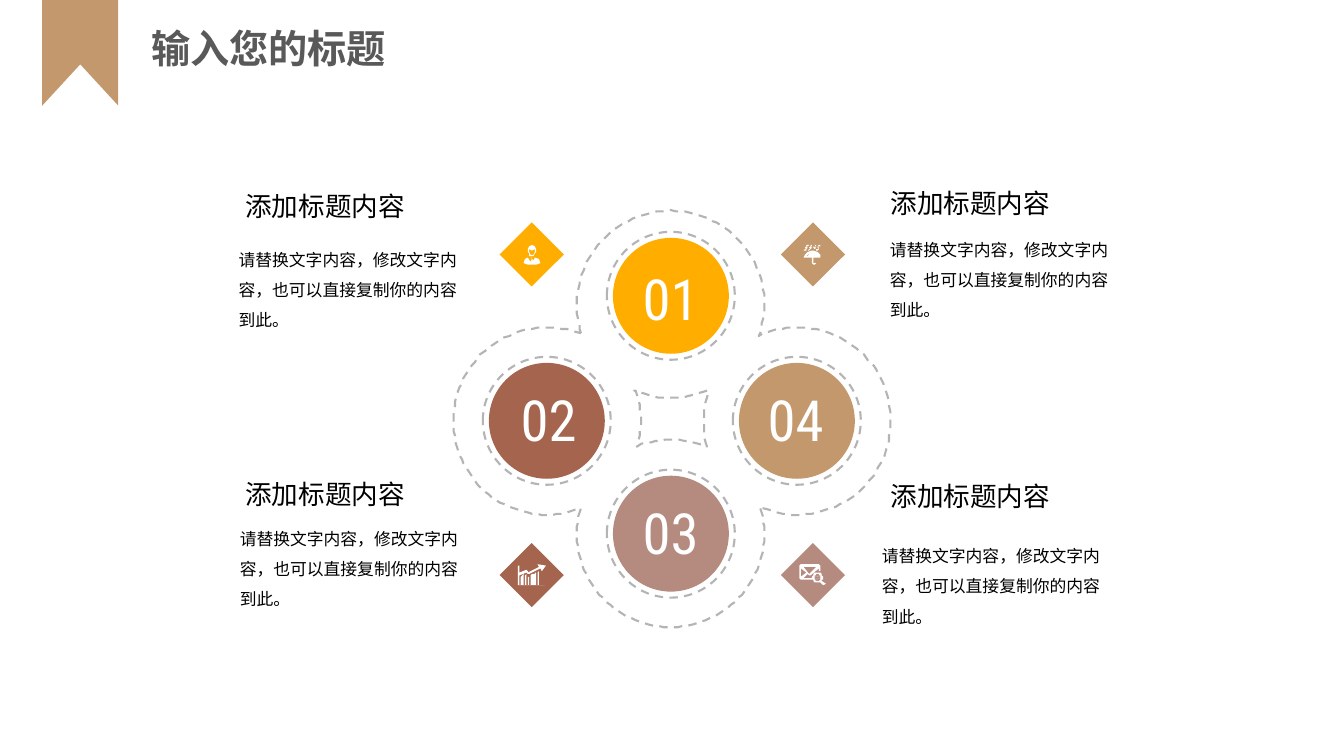
"""Build a slide with four numbered circles, four icon diamonds and their captions."""
from dataclasses import dataclass
from math import cos, radians, sin

from lxml.etree import SubElement
from pptx import Presentation
from pptx.dml.color import RGBColor as RGB
from pptx.enum.dml import MSO_LINE
from pptx.enum.shapes import MSO_SHAPE as Preset
from pptx.enum.text import MSO_ANCHOR as Anchor, MSO_AUTO_SIZE as AutoSize, PP_ALIGN as Align
from pptx.oxml.ns import qn
from pptx.util import Pt


@dataclass(frozen=True)
class Theme:
    tan: RGB = RGB(0xC3, 0x98, 0x6D)
    rust: RGB = RGB(0xA5, 0x64, 0x4E)
    amber: RGB = RGB(0xFF, 0xAE, 0x00)
    rose: RGB = RGB(0xB5, 0x8B, 0x80)
    dash: RGB = RGB(0xB4, 0xB4, 0xB4)
    grey: RGB = RGB(0x59, 0x59, 0x59)
    white: RGB = RGB(0xFF, 0xFF, 0xFF)
    black: RGB = RGB(0, 0, 0)
    title: float = 28
    number: float = 40.5
    heading: float = 19
    body: float = 12
    latin: str = "Roboto Condensed"
    chinese: str = "Noto Sans CJK SC"


theme = Theme()
prs = Presentation()
prs.slide_width, prs.slide_height = Pt(960), Pt(540)
slide = prs.slides.add_slide(prs.slide_layouts[5])
shapes = slide.shapes


def arc(x, y, radius, start, end, step=3):
    """Return points along a circle between two angles in degrees."""
    count = max(1, round(abs(end - start) / step))
    angles = [radians(start + (end - start) * i / count) for i in range(count + 1)]
    return [(x + radius * cos(a), y + radius * sin(a)) for a in angles]


def trace(contours, x=0, y=0):
    """Draw closed contours, given in points around (x, y), as one shape."""
    builder = None
    for contour in contours:
        (first_x, first_y), *rest = [(x + dx, y + dy) for dx, dy in contour]
        if builder is None:
            builder = shapes.build_freeform(first_x, first_y, scale=Pt(1))
        else:
            builder.move_to(first_x, first_y)
        builder.add_line_segments(rest, close=True)
    drawn = builder.convert_to_shape()
    drawn.shadow.inherit = False
    return drawn


for preset, top, height, color in [(Preset.RECTANGLE, -0.7, 76.3, theme.tan),
                                   (Preset.ISOSCELES_TRIANGLE, 46.1, 29.5, theme.white)]:
    ribbon = shapes.add_shape(preset, Pt(30.2), Pt(top), Pt(54.3), Pt(height))
    ribbon.shadow.inherit = False
    ribbon.fill.solid()
    ribbon.fill.fore_color.rgb = color
    ribbon.line.fill.background()

# Angles run clockwise from the right: outer sweep first, then inner sweep.
lobes = [(479, 217.4, (162, 378), (67, 113)), (569.4, 300.8, (246, 474), (164, 198)),
         (479, 381, (-16, 196), (249, 293)), (390.8, 300.8, (69, 291), (-19, 15))]
outer = [point for x, y, sweep, _ in lobes for point in arc(x, y, 66.9, *sweep)]
top_lobe, *others = lobes
inner = [point for x, y, _, sweep in [top_lobe, *reversed(others)]
         for point in arc(x, y, 66.9, *sweep)]
clover = trace([outer, inner])
clover.fill.background()

dashed = [clover]
for x, y, color in [(479.2, 211.3, theme.amber), (569.2, 300.6, theme.tan),
                    (390.6, 300.6, theme.rust), (479.2, 381.2, theme.rose)]:
    ring, disc = [shapes.add_shape(Preset.OVAL, Pt(x - r), Pt(y - r), Pt(2 * r), Pt(2 * r))
                  for r in (45.7, 41.4)]
    ring.shadow.inherit = disc.shadow.inherit = False
    ring.fill.background()
    disc.fill.solid()
    disc.fill.fore_color.rgb = color
    disc.line.fill.background()
    dashed.append(ring)

for outline in dashed:
    outline.line.color.rgb = theme.dash
    outline.line.width = Pt(1.5)
    outline.line.dash_style = MSO_LINE.DASH

person = [
    [(-3.2, -4), (-2.2, -6), (0, -6.8), (2.2, -6), (3.2, -4), (3.2, -1.4), (2.2, -0.6),
     (1.3, 0.8), (0, 1.2), (-1.3, 0.8), (-2.2, -0.6), (-3.2, -1.4)],
    [(-1.8, -3.8), (-1.8, -1.6), (-1, 0), (0, 0.4), (1, 0), (1.8, -1.6), (1.8, -3.4), (0, -3.2)],
    [(-2.5, 1.8), (-5.2, 3), (-6.1, 6.5), (-3, 7.3), (3, 7.3), (6.1, 6.5), (5.2, 3), (2, 1.8),
     (1, 4.7), (0.4, 3.2), (0.5, 2.4), (-0.5, 2.4), (-0.2, 3.2), (-1, 5.2)]]

drops = [[(x, y), (x + 1.2, y + 0.4), (x + 0.7, y + 1.3), (x - 0.5, y + 0.9)]
         for row, (left, y) in enumerate([(-4.3, -7.2), (-4.9, -5.4), (-5.7, -3.7)])
         for x in [left + 2.8 * i for i in range(4)] if row < 2 or abs(x) > 1]
umbrella = [
    [(-0.7, -3.2), (0, -3.2), (0, -2.5), (3, -1.6), (5, 0.2), (5.8, 2.7), (3.5, 2.2), (1.5, 2.7),
     (0, 2.2), (0, 6), (0.8, 6.7), (1.5, 6), (2.3, 6.2), (1.6, 7.4), (0.2, 7.5), (-0.8, 6.6),
     (-0.8, 2.2), (-2.4, 2.7), (-4.4, 2.2), (-6.7, 2.7), (-5.6, -0.2), (-3.4, -1.8), (-0.7, -2.5)],
    [(-5.2, 1.1), (-4, 1.6), (-1.8, -1.6)], *drops]

bars = [[(x, 6.8), (x, top), (x + 1.1, top - 0.3), (x + 1.1, 6.8)]
        for x, top in [(-8.3 + 1.8 * i, top) for i, top in
                       enumerate([0.7, 0, 0, 1.1, 0, -0.7, -1.8, -2.2])]]
growth = [
    [(-9.7, -6.8), (-9, -6.8), (-9, 6.8), (9, 6.8), (9, 7.6), (-9.7, 7.6)],
    [(-9, -1.8), (-4, -4), (-3.2, -3.2), (-2.5, -1.8), (5.4, -5.4), (4.7, -7.4), (9.7, -6.8),
     (6.8, -2.5), (6.1, -4.5), (-1.8, -0.4), (-3.2, -1.1), (-4, -1.8), (-9, 0.4)], *bars]

lines = [[(x, y), (x, y + 0.5), (x + width, y + 0.5), (x + width, y)]
         for x, y, width in [(2.9, 0.3, 0.9), (1.8, 1, 3), (1.8, 2, 3.2), (1.8, 2.9, 1.6)]]
mail = [
    [(-9.7, -6.5), (-8.8, -7.5), (4.3, -7.5), (5.4, -6.5), (5.4, -2.7), (4, -3), (4, -5),
     (-1.8, 0.2), (-2.4, 0.2), (-4, -1.2), (-7, 1.8), (-1.1, 1.8), (-0.9, 3.2), (-8.8, 3.2),
     (-9.7, 2.3)],
    [(-8.4, -5), (-8.4, 1.1), (-4.9, -1.8)],
    [(-6.8, -6.1), (-2.3, -1.2), (2.5, -6.1)],
    arc(3.3, 1.8, 3.7, 0, 345, 15), arc(3.3, 1.8, 2.4, 345, 0, 15),
    [(5.5, 5), (7.7, 7.6), (9.1, 6.2), (6.5, 3.9)], *lines]

for x, y, color, icon in [(580.7, 181.8, theme.tan, umbrella), (379.8, 410.8, theme.rust, growth),
                          (379.8, 181.8, theme.amber, person), (580.7, 410.8, theme.rose, mail)]:
    diamond = shapes.add_shape(Preset.RECTANGLE, Pt(x - 16.2), Pt(y - 16.2), Pt(32.4), Pt(32.4))
    diamond.rotation = 45
    diamond.shadow.inherit = False
    symbol = trace(icon, x, y)
    for part, fill in [(diamond, color), (symbol, theme.white)]:
        part.fill.solid()
        part.fill.fore_color.rgb = fill
        part.line.fill.background()

title = shapes.title
title.left, title.top, title.width, title.height = Pt(100.8), Pt(13.7), Pt(224), Pt(41)
title.text_frame.text = "输入您的标题"
title.text_frame.auto_size = AutoSize.NONE
title.text_frame.vertical_anchor = Anchor.TOP
styled = [(title, theme.title, theme.grey, theme.chinese, Align.LEFT)]

for number, x, y in [("01", 451.4, 184.3), ("04", 540.7, 270.7),
                     ("02", 364.3, 271.4), ("03", 451.4, 352.1)]:
    label = shapes.add_textbox(Pt(x), Pt(y), Pt(55.4), Pt(56.2))
    label.text_frame.text = number
    label.text_frame.word_wrap = False
    label.text_frame.vertical_anchor = Anchor.MIDDLE
    styled.append((label, theme.number, theme.white, theme.latin, Align.CENTER))

for heading_x, heading_y, body_x, body_y, body_width in [
        (164.2, 131.8, 163.4, 175.7, 175.7), (164.2, 337.7, 164.2, 375.1, 175.7),
        (625, 130.3, 628.6, 168.5, 177.8), (625, 339.1, 622.8, 387.4, 177.8)]:
    heading = shapes.add_textbox(Pt(heading_x), Pt(heading_y), Pt(136), Pt(30.2))
    heading.text_frame.text = "添加标题内容"
    body = shapes.add_textbox(Pt(body_x), Pt(body_y), Pt(body_width), Pt(55.4))
    body.text_frame.text = "请替换文字内容，修改文字内容，也可以直接复制你的内容到此。"
    body.text_frame.vertical_anchor = Anchor.MIDDLE
    body.text_frame.paragraphs[0].line_spacing = 1.5
    heading.text_frame.word_wrap = body.text_frame.word_wrap = True
    styled += [(heading, theme.heading, theme.black, theme.latin, Align.CENTER),
               (body, theme.body, theme.black, theme.latin, Align.LEFT)]

for box, size, color, face, align in styled:
    paragraph = box.text_frame.paragraphs[0]
    paragraph.alignment = align
    paragraph.font.size = Pt(size)
    paragraph.font.bold = box is title
    paragraph.font.color.rgb = color
    paragraph.font.name = face
    defaults = paragraph._p.pPr.find(qn("a:defRPr"))
    SubElement(defaults, qn("a:ea")).set("typeface", theme.chinese)

prs.save("out.pptx")
